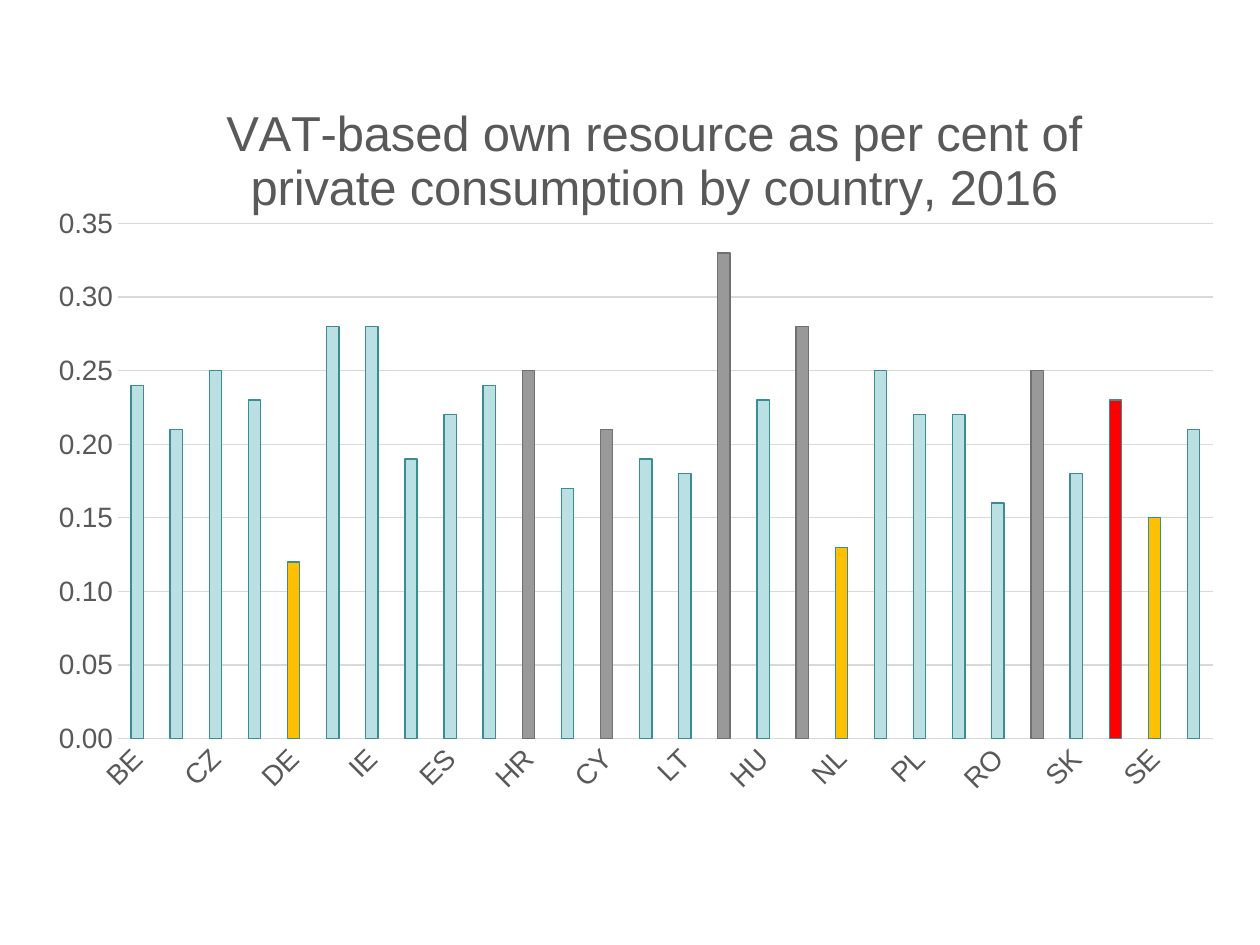
from lxml import etree
from pptx import Presentation
from pptx.chart.data import CategoryChartData
from pptx.dml.color import RGBColor
from pptx.enum import chart as ch
from pptx.oxml import ns
from pptx.util import Inches, Pt

# Content
TITLE = "VAT-based own resource as per cent of private consumption by country, 2016"
RATES = {
    "BE": 0.24, "BG": 0.21, "CZ": 0.25, "DK": 0.23, "DE": 0.12, "EE": 0.28, "IE": 0.28,
    "EL": 0.19, "ES": 0.22, "FR": 0.24, "HR": 0.25, "IT": 0.17, "CY": 0.21, "LV": 0.19,
    "LT": 0.18, "LU": 0.33, "HU": 0.23, "MT": 0.28, "NL": 0.13, "AT": 0.25, "PL": 0.22,
    "PT": 0.22, "RO": 0.16, "SI": 0.25, "SK": 0.18, "FI": 0.23, "SE": 0.15, "UK": 0.21,
}

# Colours
BLACK = RGBColor(0x00, 0x00, 0x00)
TEXT = RGBColor(0x59, 0x59, 0x59)
GRID = RGBColor(0xD9, 0xD9, 0xD9)
AQUA = RGBColor(0xBB, 0xE0, 0xE3)
TEAL = RGBColor(0x3C, 0x8C, 0x93)
GOLD = RGBColor(0xFF, 0xC0, 0x00)
GREY = RGBColor(0x99, 0x99, 0x99)
DARK = RGBColor(0x70, 0x70, 0x70)
RED = RGBColor(0xFF, 0x00, 0x00)

# Fill, outline and countries of each highlighted group
GROUPS = [
    (GOLD, TEAL, ["DE", "NL", "SE"]),
    (GREY, DARK, ["HR", "CY", "LU", "MT", "SI"]),
    (RED, TEAL, ["FI"]),
]


def set_font(font, size, color):
    font.name = "Arial"
    font.size = Pt(size)
    font.bold = False
    font.color.rgb = color


def set_line(line, color):
    line.color.rgb = color
    line.width = Pt(0.75)


def paint(form, fill, edge):
    form.fill.solid()
    form.fill.fore_color.rgb = fill
    set_line(form.line, edge)


def place(parent, **parts):
    """Give a chart part a manual layout, in fractions of the chart."""
    for old in parent.findall(ns.qn("c:layout")):
        parent.remove(old)
    layout = etree.Element(ns.qn("c:layout"))
    manual = etree.SubElement(layout, ns.qn("c:manualLayout"))
    for name, val in parts.items():
        etree.SubElement(manual, ns.qn("c:" + name)).set("val", str(val))
    text = parent.find(ns.qn("c:tx"))
    if text is None:
        parent.insert(0, layout)
    else:
        text.addnext(layout)


# Slide and chart
prs = Presentation()
prs.slide_width, prs.slide_height = Inches(10), Inches(7.5)
slide = prs.slides.add_slide(prs.slide_layouts[6])
data = CategoryChartData(number_format="0.00")
data.categories = list(RATES)
data.add_series("Series 1", list(RATES.values()))
chart = slide.shapes.add_chart(
    ch.XL_CHART_TYPE.COLUMN_CLUSTERED,
    Inches(0.42), Inches(0.44), Inches(9.33), Inches(6.12), data).chart
set_font(chart.font, 10, BLACK)
chart.has_legend = False

# Title
chart.has_title = True
title = chart.chart_title
title.text_frame.text = TITLE
set_font(title.text_frame.paragraphs[0].runs[0].font, 28, TEXT)
title.include_in_layout = False

# Bars
plot = chart.plots[0]
plot.gap_width = 219
plot.overlap = -27
plot.vary_by_categories = False
bars = plot.series[0]
bars.invert_if_negative = False
paint(bars.format, AQUA, TEAL)
names = list(RATES)
for fill, edge, group in GROUPS:
    for name in group:
        paint(bars.points[names.index(name)].format, fill, edge)

# Axes
cats, vals = chart.category_axis, chart.value_axis
for axis in (cats, vals):
    axis.major_tick_mark = axis.minor_tick_mark = ch.XL_TICK_MARK.NONE
    set_font(axis.tick_labels.font, 16, TEXT)
set_line(cats.format.line, GRID)
cats._element.find(ns.qn("c:txPr")).find(ns.qn("a:bodyPr")).set("rot", "-2700000")
vals.minimum_scale, vals.maximum_scale, vals.major_unit = 0, 0.35, 0.05
vals.tick_labels.number_format = "0.00"
vals.tick_labels.number_format_is_linked = False
vals.format.line.fill.background()
set_line(vals.major_gridlines.format.line, GRID)

# Title and plot positions
place(title._element, xMode="edge", yMode="edge", x=0.14, y=0.05)
area = chart._chartSpace.find(ns.qn("c:chart")).find(ns.qn("c:plotArea"))
place(area, layoutTarget="inner", xMode="edge", yMode="edge",
      x=0.055, y=0.218, w=0.932, h=0.668)

prs.save("out.pptx")
